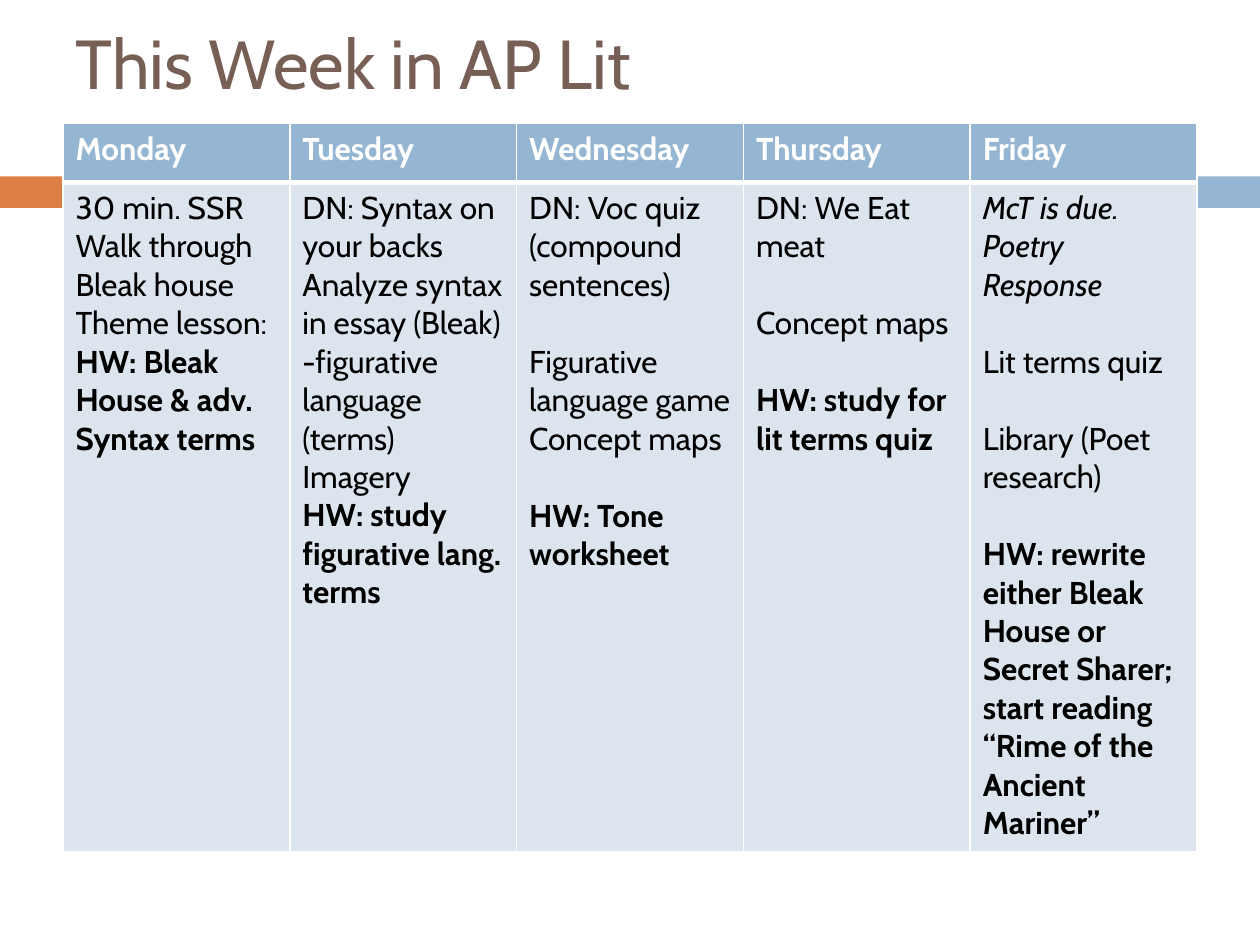
from lxml import etree
from pptx import Presentation, util as u
from pptx.dml.color import RGBColor
from pptx.enum import shapes, text
from pptx.oxml.ns import qn

WIDE, HIGH = 10, 7.5
FONT = "Cabin"
BLUE, PALE, RUST, BROWN = "94B6D2", "DCE5EE", "DD8047", "775F55"
WHITE, BLACK = "FFFFFF", "000000"

WEEK = {
    "Monday": [
        ("30 min. SSR", ""), ("Walk through", ""), ("Bleak house", ""),
        ("Theme lesson:", ""),
        ("HW: Bleak House & adv. Syntax terms", "bold"),
    ],
    "Tuesday": [
        ("DN: Syntax on your backs", ""),
        ("Analyze syntax in essay (Bleak)", ""),
        ("-figurative language (terms)", ""), ("Imagery", ""),
        ("HW: study figurative lang. terms", "bold"),
    ],
    "Wednesday": [
        ("DN: Voc quiz (compound sentences)", ""),
        ("Figurative language game", "gap"), ("Concept maps", ""),
        ("HW: Tone worksheet", "bold gap"),
    ],
    "Thursday": [
        ("DN: We Eat meat", ""), ("Concept maps", "gap"),
        ("HW: study for lit terms quiz", "bold gap"),
    ],
    "Friday": [
        ("McT is due.", "italic"), ("Poetry Response", "italic"),
        ("Lit terms quiz", "gap"), ("Library (Poet research)", "gap"),
        ("HW: rewrite either Bleak House or Secret Sharer; start reading "
         "“Rime of the Ancient Mariner”", "bold gap"),
    ],
}


def color(code):
    return RGBColor.from_string(code)


def place(box):
    return [u.Inches(n) for n in box]


def write(frame, lines, size, tint):
    for n, (words, style) in enumerate(lines):
        para = frame.add_paragraph() if n else frame.paragraphs[0]
        para.alignment = text.PP_ALIGN.LEFT
        if "gap" in style:
            para.space_before = u.Pt(22)
        run = para.add_run()
        run.text = words
        font = run.font
        font.name, font.size = FONT, u.Pt(size)
        font.bold, font.italic = "bold" in style, "italic" in style
        font.color.rgb = color(tint)


def head(slide, box):
    title = slide.shapes.title
    title.left, title.top, title.width, title.height = place(box)
    frame = title.text_frame
    frame.auto_size = text.MSO_AUTO_SIZE.NONE
    frame.vertical_anchor = text.MSO_ANCHOR.MIDDLE
    write(frame, [("This Week in AP Lit", "")], 39.6, BROWN)


def band(slide, box):
    left, top, width, height = box
    split, gap = 0.58, 0.07
    parts = [(left, split, RUST),
             (left + split + gap, width - split - gap, BLUE)]
    for start, span, tint in parts:
        bar = slide.shapes.add_shape(shapes.MSO_SHAPE.RECTANGLE,
                                     *place((start, top, span, height)))
        bar.shadow.inherit = False
        bar.fill.solid()
        bar.fill.fore_color.rgb = color(tint)
        bar.line.fill.background()


def edge(cell, base):
    props = cell._tc.get_or_add_tcPr()
    for side, points in zip("LRTB", (1, 1, base if base == 1 else 1, base)):
        line = etree.SubElement(props, qn(f"a:ln{side}"), w=str(u.Pt(points)))
        fill = etree.SubElement(line, qn("a:solidFill"))
        etree.SubElement(fill, qn("a:srgbClr"), val=WHITE)


def paint(cell, lines, tint, ink, base):
    edge(cell, base)
    cell.fill.solid()
    cell.fill.fore_color.rgb = color(tint)
    write(cell.text_frame, lines, 18, ink)


def plan(slide, box):
    grid = slide.shapes.add_table(2, len(WEEK), *place(box)).table
    top = 0.47
    grid.rows[0].height = u.Inches(top)
    grid.rows[1].height = u.Inches(box[3] - top)
    for n, (day, tasks) in enumerate(WEEK.items()):
        grid.columns[n].width = u.Inches(box[2] / len(WEEK))
        paint(grid.cell(0, n), [(day, "bold")], BLUE, WHITE, 3)
        paint(grid.cell(1, n), tasks, PALE, BLACK, 1)
        edge_top = grid.cell(1, n)._tc.tcPr.find(qn("a:lnT"))
        edge_top.set("w", str(u.Pt(3)))


def main():
    deck = Presentation()
    deck.slide_width, deck.slide_height = u.Inches(WIDE), u.Inches(HIGH)
    slide = deck.slides.add_slide(deck.slide_layouts[5])
    side = WIDE * 0.05
    span = WIDE - 2 * side
    band(slide, (0, 1.4, WIDE, 0.25))
    head(slide, (side, HIGH * 0.04, span, 0.38))
    plan(slide, (side, 0.98, span, 5.78))
    deck.save("out.pptx")


if __name__ == "__main__":
    main()
